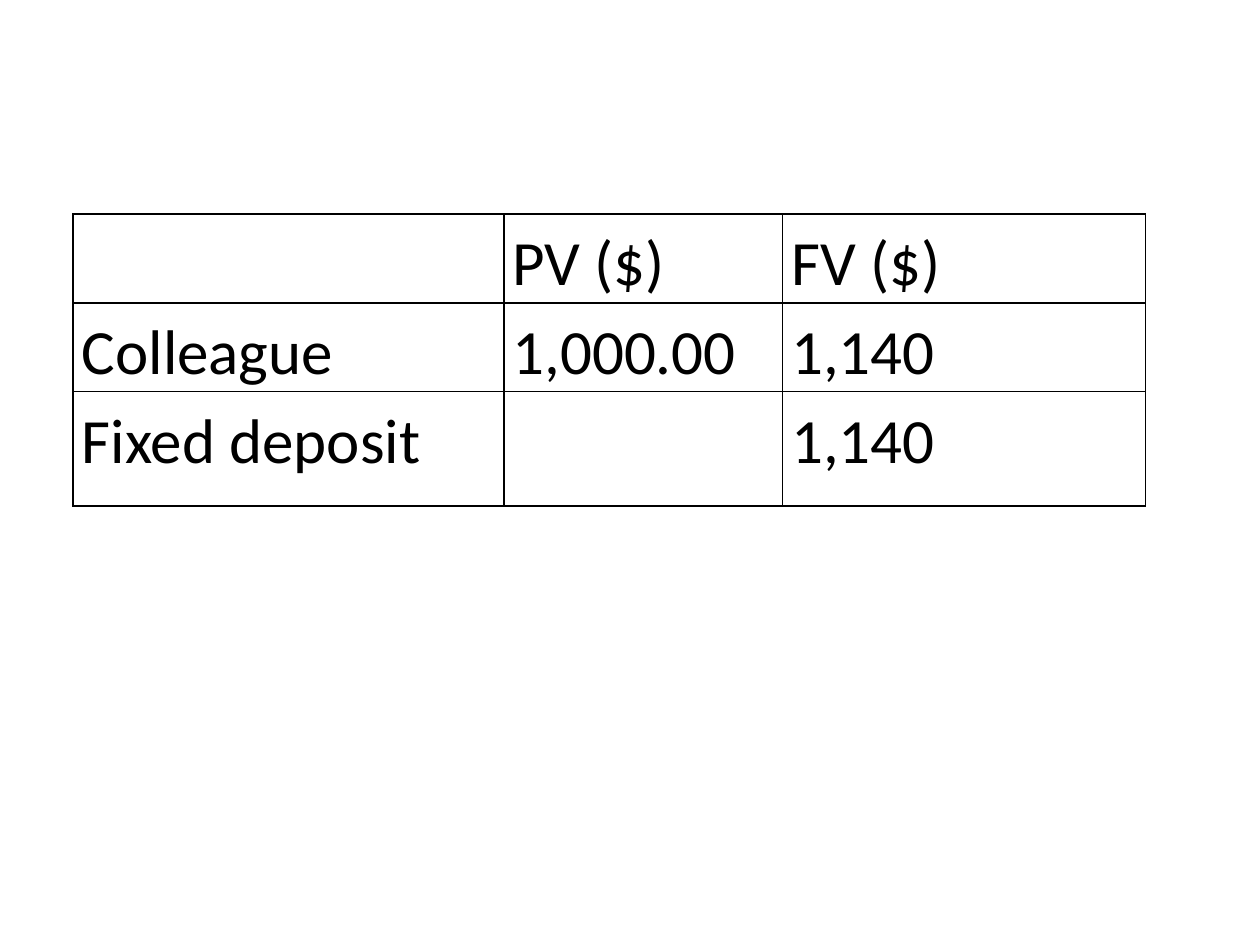
from dataclasses import dataclass

from lxml import etree
from pptx import Presentation
from pptx.dml.color import RGBColor
from pptx.enum.text import PP_ALIGN
from pptx.oxml.ns import qn
from pptx.util import Inches, Pt

JUSTIFY = PP_ALIGN.JUSTIFY
SIDES = ("a:lnL", "a:lnR", "a:lnT", "a:lnB")


@dataclass(frozen=True)
class Theme:
    ink: str = "000000"
    font: str = "Calibri"
    body_size: float = 36
    line_spacing: float = 1.15
    border_width: float = 1
    side_margin: float = 0.07


THEME = Theme()
COLUMN_WIDTHS = (3.42, 2.21, 2.88)
ROW_HEIGHTS = (0.7, 0.7, 0.91)
VALUES = (
    ("", "PV ($)", "FV ($)"),
    ("Colleague", "1,000.00", "1,140"),
    ("Fixed deposit", "", "1,140"),
)


def write_text(frame, text, size=THEME.body_size, color=THEME.ink, align=JUSTIFY):
    paragraph = frame.paragraphs[0]
    paragraph.alignment = align
    paragraph.line_spacing = THEME.line_spacing
    run = paragraph.add_run()
    run.text = text
    run.font.name = THEME.font
    run.font.size = Pt(size)
    run.font.color.rgb = RGBColor.from_string(color)


def draw_borders(cell):
    properties = cell._tc.get_or_add_tcPr()
    for position, side in enumerate(SIDES):
        line = etree.Element(qn(side), w=str(Pt(THEME.border_width)))
        fill = etree.SubElement(line, qn("a:solidFill"))
        etree.SubElement(fill, qn("a:srgbClr"), val=THEME.ink)
        properties.insert(position, line)


def format_cell(cell, text):
    cell.margin_left = cell.margin_right = Inches(THEME.side_margin)
    cell.margin_top = cell.margin_bottom = 0
    cell.fill.background()
    draw_borders(cell)
    if text:
        write_text(cell.text_frame, text)


def add_value_table(slide, left, top, width, height):
    table = slide.shapes.add_table(
        len(ROW_HEIGHTS), len(COLUMN_WIDTHS), left, top, width, height
    ).table
    table.first_row = table.horz_banding = False
    for column, share in zip(table.columns, COLUMN_WIDTHS):
        column.width = round(width * share / sum(COLUMN_WIDTHS))
    for row, share, texts in zip(table.rows, ROW_HEIGHTS, VALUES):
        row.height = round(height * share / sum(ROW_HEIGHTS))
        for cell, text in zip(row.cells, texts):
            format_cell(cell, text)


def main():
    deck = Presentation()
    deck.slide_width, deck.slide_height = Inches(10), Inches(7.5)
    slide = deck.slides.add_slide(deck.slide_layouts[6])
    add_value_table(
        slide,
        Inches(0.58),
        Inches(1.7),
        Inches(sum(COLUMN_WIDTHS)),
        Inches(sum(ROW_HEIGHTS)),
    )
    deck.save("out.pptx")


if __name__ == "__main__":
    main()
